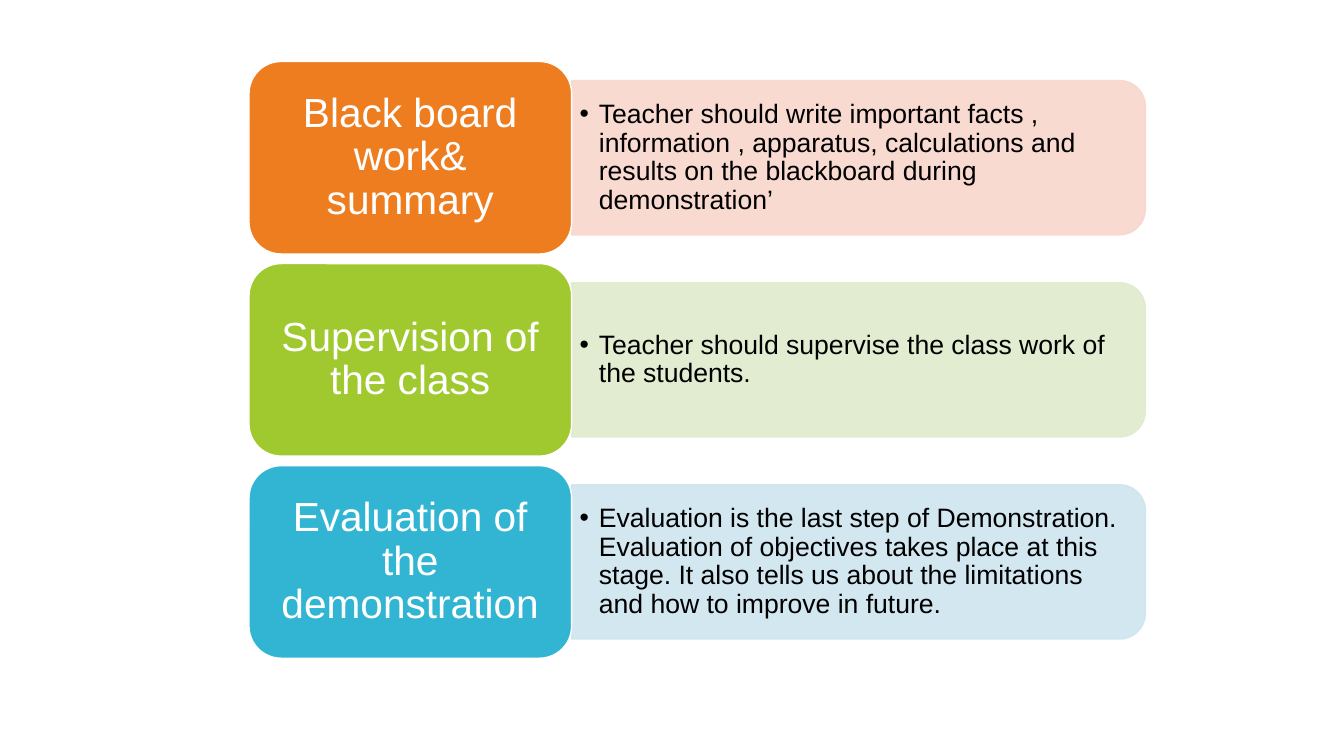
from dataclasses import dataclass

from lxml import etree
from pptx import Presentation
from pptx.dml.color import RGBColor
from pptx.enum import shapes, text
from pptx.oxml import ns
from pptx.util import Inches, Pt

STEPS = [
    ("Black board work& summary",
     "Teacher should write important facts , information , apparatus, "
     "calculations and results on the blackboard during demonstration’",
     "ED7D1F", "F8D7CD"),
    ("Supervision of the class",
     "Teacher should supervise the class work of the students.",
     "A0C82F", "DFEBCD"),
    ("Evaluation of the demonstration",
     "Evaluation is the last step of Demonstration. Evaluation of objectives "
     "takes place at this stage. It also tells us about the limitations and "
     "how to improve in future.",
     "32B5D3", "CEE5EF"),
]


@dataclass
class Theme:
    font: str = "Arial"
    head: int = 29
    body: int = 19
    light: str = "FFFFFF"
    dark: str = "000000"
    alpha: int = 90


THEME = Theme()
LEFT, TOP, PITCH = 2.47, 0.61, 2.005
HEAD_W, HEAD_H = 3.2, 1.91
BAND_W, BAND_H = 5.69, 1.53
BODY_W, BODY_H = 5.61, 1.38


def paint(shape, fill, line):
    shape.shadow.inherit = False
    shape.fill.solid()
    shape.fill.fore_color.rgb = RGBColor.from_string(fill)
    shape.line.color.rgb = RGBColor.from_string(line)
    shape.line.width = Pt(1)


def fade(shape):
    for color in shape._element.spPr.iter(ns.qn("a:srgbClr")):
        etree.SubElement(color, ns.qn("a:alpha"), val=str(THEME.alpha * 1000))


def write(shape, words, size, color, align, pad):
    frame = shape.text_frame
    frame.word_wrap = True
    frame.vertical_anchor = text.MSO_ANCHOR.MIDDLE
    frame.margin_left = frame.margin_right = Inches(pad)
    frame.margin_top = frame.margin_bottom = Inches(pad / 2)
    frame.text = words
    para = frame.paragraphs[0]
    para.alignment = align
    para.line_spacing = 0.9
    font = para.runs[0].font
    font.name = THEME.font
    font.size = Pt(size)
    font.color.rgb = RGBColor.from_string(color)
    return para


def bullet(para):
    props = para._p.get_or_add_pPr()
    indent = Inches(0.19)
    props.set("marL", str(indent))
    props.set("indent", str(-indent))
    etree.SubElement(props, ns.qn("a:buFont"), typeface=THEME.font)
    etree.SubElement(props, ns.qn("a:buChar"), char="•")


def add_step(slide, row, head, body, strong, pale):
    top = TOP + row * PITCH
    mid = top + HEAD_H / 2
    edge = LEFT + HEAD_W

    band = slide.shapes.add_shape(
        shapes.MSO_SHAPE.ROUND_2_SAME_RECTANGLE,
        Inches(edge + (BAND_W - BAND_H) / 2), Inches(mid - BAND_W / 2),
        Inches(BAND_H), Inches(BAND_W))
    band.rotation = 90
    paint(band, pale, pale)
    fade(band)

    note = slide.shapes.add_textbox(
        Inches(edge), Inches(mid - BODY_H / 2), Inches(BODY_W), Inches(BODY_H))
    bullet(write(note, body, THEME.body, THEME.dark, text.PP_ALIGN.LEFT, 0.08))

    card = slide.shapes.add_shape(
        shapes.MSO_SHAPE.ROUNDED_RECTANGLE,
        Inches(LEFT), Inches(top), Inches(HEAD_W), Inches(HEAD_H))
    paint(card, strong, THEME.light)
    write(card, head, THEME.head, THEME.light, text.PP_ALIGN.CENTER, 0.12)


def main():
    deck = Presentation()
    deck.slide_width, deck.slide_height = Inches(13.33), Inches(7.5)
    slide = deck.slides.add_slide(deck.slide_layouts[6])
    for row, step in enumerate(STEPS):
        add_step(slide, row, *step)
    deck.save("out.pptx")


if __name__ == "__main__":
    main()
